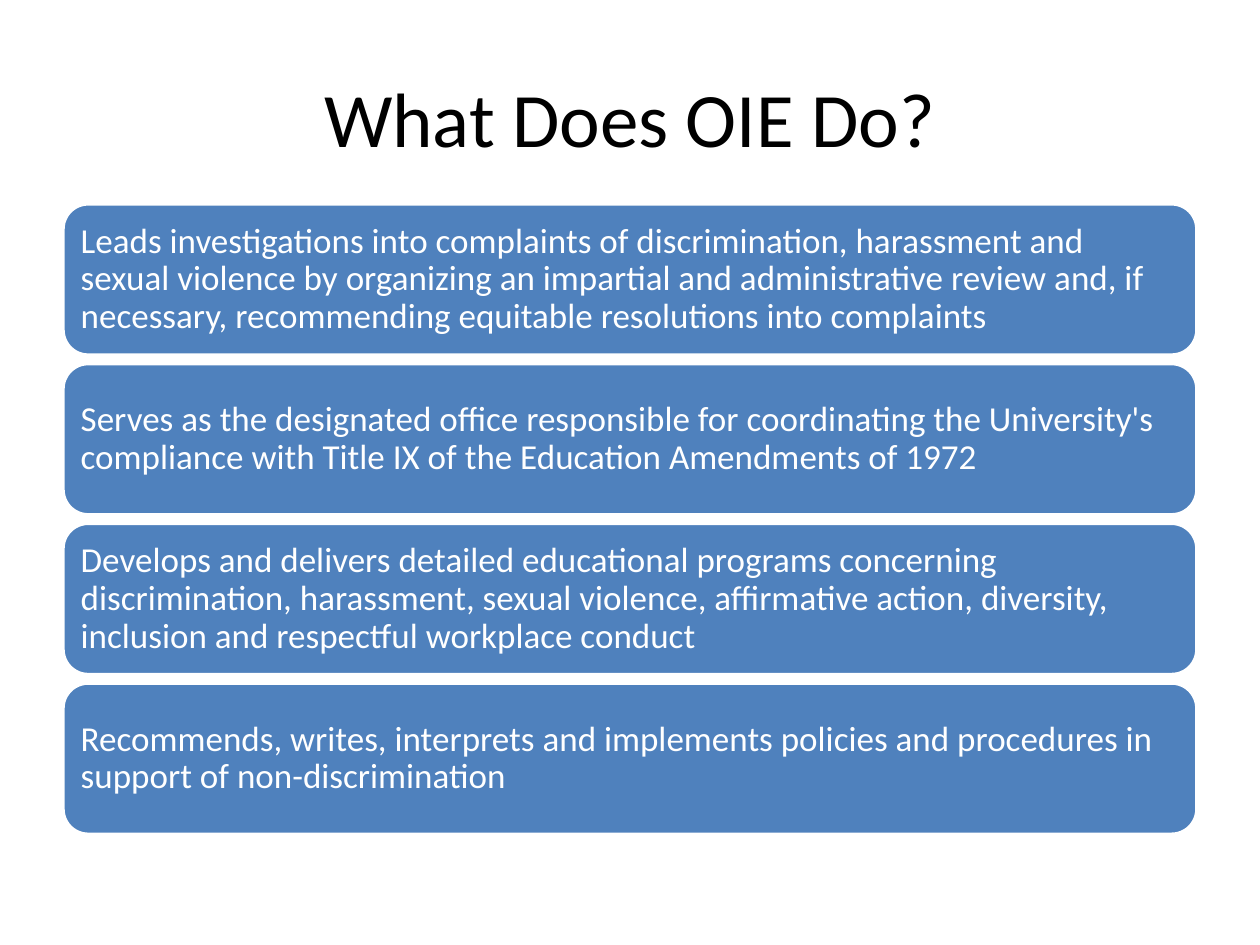
import dataclasses

import pptx
import pptx.dml.color
import pptx.enum.shapes
import pptx.enum.text
import pptx.util

Cm = pptx.util.Cm
Pt = pptx.util.Pt
Color = pptx.dml.color.RGBColor
Align = pptx.enum.text.PP_ALIGN

BLUE = Color(0x4F, 0x81, 0xBD)
WHITE = Color(0xFF, 0xFF, 0xFF)
BLACK = Color(0x00, 0x00, 0x00)

LEFT = 1.27
WIDTH = 22.86
TOP = 4.11
HEIGHT = 3.05
STEP = 3.22


@dataclasses.dataclass
class Duty:
    text: str
    top: float


TEXTS = [
    "Leads investigations into complaints of discrimination, harassment and "
    "sexual violence by organizing an impartial and administrative review and, "
    "if necessary, recommending equitable resolutions into complaints",
    "Serves as the designated office responsible for coordinating the "
    "University's compliance with Title IX of the Education Amendments of 1972",
    "Develops and delivers detailed educational programs concerning "
    "discrimination, harassment, sexual violence, affirmative action, "
    "diversity, inclusion and respectful workplace conduct",
    "Recommends, writes, interprets and implements policies and procedures in "
    "support of non-discrimination",
]
DUTIES = [Duty(text, TOP + i * STEP) for i, text in enumerate(TEXTS)]


def write(shape, text: str, size: int, color: Color, align: Align) -> None:
    frame = shape.text_frame
    frame.text = text
    frame.word_wrap = True
    frame.vertical_anchor = pptx.enum.text.MSO_ANCHOR.MIDDLE
    line = frame.paragraphs[0]
    line.alignment = align
    font = line.runs[0].font
    font.name = "Calibri"
    font.size = Pt(size)
    font.color.rgb = color


def draw_title(slide, text: str) -> None:
    box = slide.shapes.add_textbox(Cm(LEFT), Cm(0.76), Cm(WIDTH), Cm(3.18))
    write(box, text, 44, BLACK, Align.CENTER)


def draw_duty(slide, duty: Duty) -> None:
    card = slide.shapes.add_shape(
        pptx.enum.shapes.MSO_SHAPE.ROUNDED_RECTANGLE,
        Cm(LEFT), Cm(duty.top), Cm(WIDTH), Cm(HEIGHT),
    )
    card.shadow.inherit = False
    card.fill.solid()
    card.fill.fore_color.rgb = BLUE
    card.line.color.rgb = WHITE
    card.line.width = Pt(2)
    write(card, duty.text, 20, WHITE, Align.LEFT)
    frame = card.text_frame
    frame.margin_left = frame.margin_right = Cm(0.21)
    frame.margin_top = frame.margin_bottom = Cm(0.21)
    frame.paragraphs[0].line_spacing = 0.9


def main() -> None:
    deck = pptx.Presentation()
    deck.slide_width = Cm(25.4)
    deck.slide_height = Cm(19.05)
    slide = deck.slides.add_slide(deck.slide_layouts[6])
    draw_title(slide, "What Does OIE Do?")
    for duty in DUTIES:
        draw_duty(slide, duty)
    deck.save("out.pptx")


if __name__ == "__main__":
    main()
